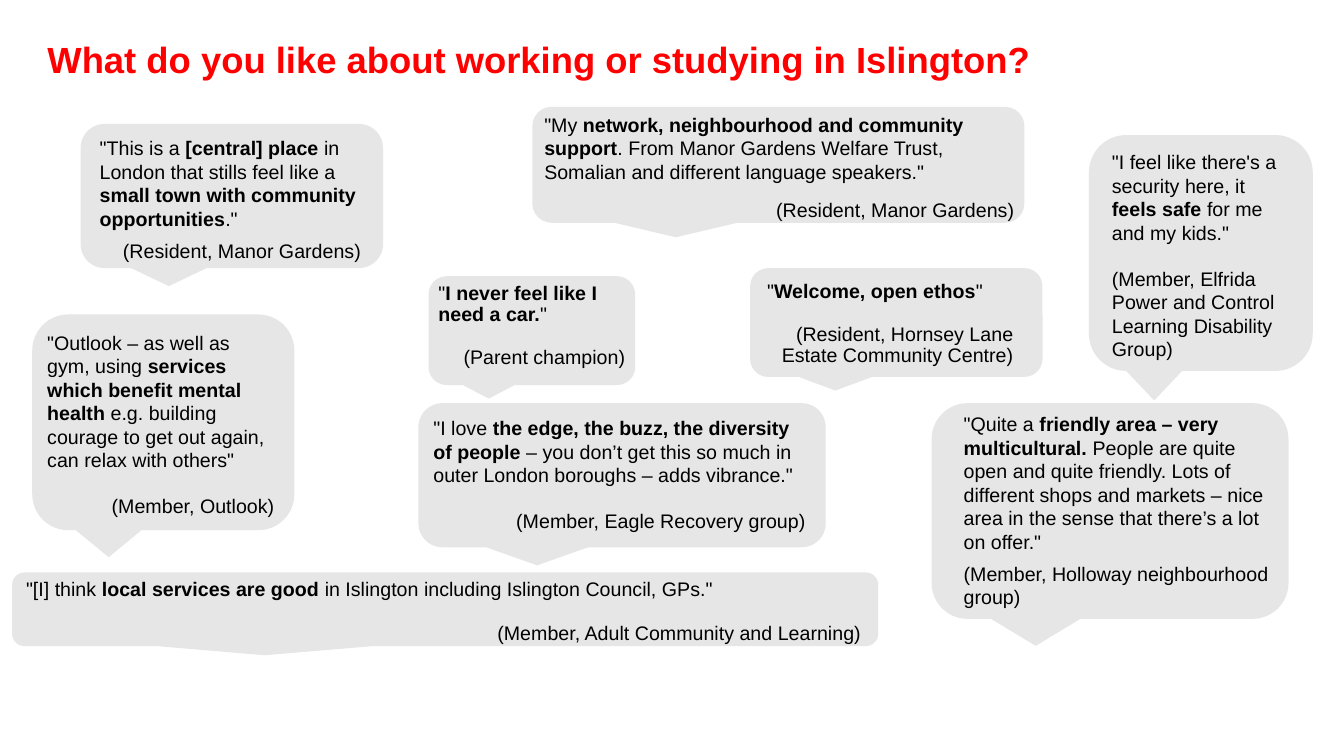
import pptx
import pptx.util
import pptx.dml.color
import pptx.enum.shapes
import pptx.enum.text

Inches = pptx.util.Inches
Pt = pptx.util.Pt
RGBColor = pptx.dml.color.RGBColor
ALIGN = pptx.enum.text.PP_ALIGN
ANCHOR = pptx.enum.text.MSO_ANCHOR

RED = RGBColor(0xFF, 0x00, 0x00)
BLACK = RGBColor(0x00, 0x00, 0x00)
GREY = RGBColor(0xE7, 0xE6, 0xE6)
FONT = "Arial"
LEFT, RIGHT = ALIGN.LEFT, ALIGN.RIGHT

# Each quote: bubble box, text box, runs (plain and bold in turn),
# speaker, speaker's side, line spacing, gap in points before the speaker
QUOTES = [
    ((0.8, 1.23, 3, 1.43), (0.89, 1.3, 2.79, 1.25),
     ['"This is a ', "[central] place ", "in London that stills feel like a ",
      "small town with community opportunities", '."'],
     "(Resident, Manor Gardens)", RIGHT, 1, 6),
    ((5.28, 1.06, 4.88, 1.15), (5.3, 1.07, 4.86, 0.95),
     ['"My ', "network, neighbourhood and community support",
      '. From Manor Gardens Welfare Trust, Somalian and different '
      'language speakers."'],
     "(Resident, Manor Gardens)", RIGHT, 1, 10),
    ((0.32, 3.12, 2.6, 2.14), (0.37, 3.23, 2.45, 1.89),
     ['"Outlook – as well as gym, using ',
      "services which benefit mental health",
      ' e.g. building courage to get out again, can relax with others"'],
     "(Member, Outlook)", RIGHT, 1, 16),
    ((4.25, 2.74, 2.05, 1.08), (4.25, 2.76, 2.05, 0.98),
     ['"', "I never feel like I need a car.", '"'],
     "(Parent champion)", RIGHT, 0.9, 16),
    ((7.44, 2.66, 2.9, 1.08), (7.51, 2.74, 2.64, 0.86),
     ['"', "Welcome, open ethos", '"'],
     "(Resident, Hornsey Lane Estate Community Centre)", RIGHT, 0.9, 16),
    ((10.8, 1.34, 2.22, 2.34), (10.93, 1.44, 1.92, 2.12),
     ['"I feel like there\'s a security here, it ', "feels safe ",
      'for me and my kids."'],
     "(Member, Elfrida Power and Control Learning Disability Group)",
     LEFT, 1, 16),
    ((4.15, 4, 4.04, 1.43), (4.2, 4.08, 3.89, 1.31),
     ['"I love ', "the edge, the buzz, the diversity of people",
      ' – you don’t get this so much in outer London boroughs – '
      'adds vibrance."'],
     "(Member, Eagle Recovery group)", RIGHT, 1, 16),
    ((0.12, 5.68, 8.59, 0.73), (0.16, 5.7, 8.48, 0.69),
     ['"[I] think ', "local services are good ",
      'in Islington including Islington Council, GPs."'],
     "(Member, Adult Community and Learning)", RIGHT, 0.9, 16),
    ((9.24, 4, 3.54, 2.14), (9.46, 4.04, 3.33, 1.98),
     ['"Quite a ', "friendly area – very multicultural.",
      " People are quite open and quite friendly. Lots of different shops "
      'and markets – nice area in the sense that there’s a lot on offer."'],
     "(Member, Holloway neighbourhood group)", LEFT, 1, 6),
]


def add_run(para, text, size, color, bold):
    run = para.add_run()
    run.text = text
    font = run.font
    font.name, font.size, font.bold = FONT, Pt(size), bold
    font.color.rgb = color


def set_title(slide, text):
    title = slide.shapes.title
    title.left, title.top = Inches(0.37), Inches(0.35)
    title.width, title.height = Inches(11.5), Inches(0.52)
    frame = title.text_frame
    frame.vertical_anchor = ANCHOR.MIDDLE
    frame.word_wrap = True
    para = frame.paragraphs[0]
    para.alignment = LEFT
    para.line_spacing = 0.9
    add_run(para, text, 26, RED, True)


def add_bubble(slide, box):
    kind = pptx.enum.shapes.MSO_SHAPE.ROUNDED_RECTANGULAR_CALLOUT
    shape = slide.shapes.add_shape(kind, *map(Inches, box))
    shape.shadow.inherit = False
    shape.fill.solid()
    shape.fill.fore_color.rgb = GREY
    shape.line.fill.background()


def add_quote(slide, box, runs, who, side, lines, gap):
    frame = slide.shapes.add_textbox(*map(Inches, box)).text_frame
    frame.word_wrap = True
    frame.vertical_anchor = ANCHOR.TOP

    # Quoted words
    quote = frame.paragraphs[0]
    quote.alignment = LEFT
    quote.line_spacing = lines
    for i, text in enumerate(runs):
        add_run(quote, text, 14, BLACK, i % 2 == 1)

    # Speaker
    credit = frame.add_paragraph()
    credit.alignment = side
    credit.line_spacing = lines
    credit.space_before = Pt(gap)
    add_run(credit, who, 14, BLACK, False)


def main():
    deck = pptx.Presentation()
    deck.slide_width, deck.slide_height = Inches(13.33), Inches(7.5)
    slide = deck.slides.add_slide(deck.slide_layouts.get_by_name("Title Only"))
    set_title(slide, "What do you like about working or studying in Islington?")
    for bubble, box, *words in QUOTES:
        add_bubble(slide, bubble)
        add_quote(slide, box, *words)
    deck.save("out.pptx")


if __name__ == "__main__":
    main()
